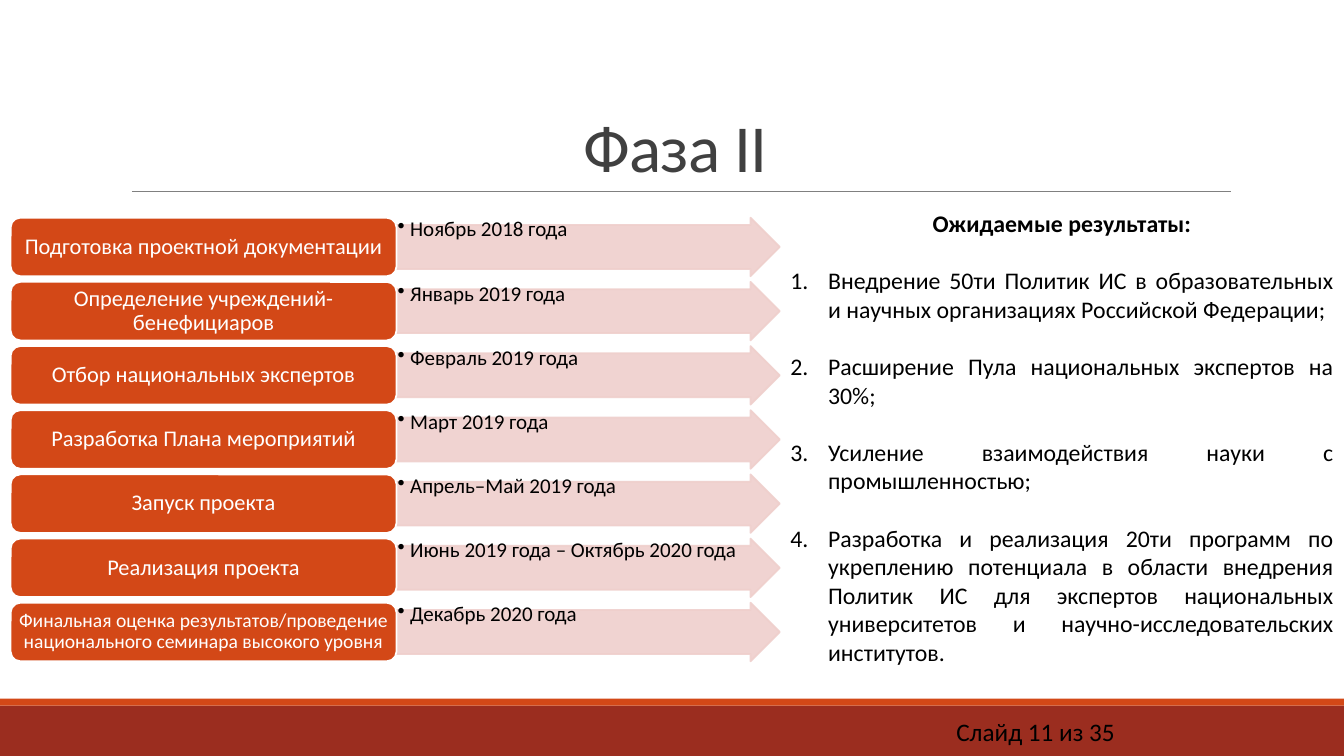
from lxml.etree import SubElement
from pptx import Presentation
from pptx.dml.color import RGBColor
from pptx.enum.shapes import MSO_CONNECTOR, MSO_SHAPE
from pptx.enum.text import MSO_ANCHOR, MSO_AUTO_SIZE, PP_ALIGN
from pptx.oxml.ns import qn
from pptx.util import Pt

ORANGE, DARK_RED, PINK = "D34817", "9B2D1F", "EFCFCC"
WHITE, BLACK, TITLE_GREY, RULE_GREY = "FFFFFF", "000000", "404040", "808080"

STAGES = [
    ("Подготовка проектной документации", "Ноябрь 2018 года", 16),
    ("Определение учреждений-бенефициаров", "Январь 2019 года", 16),
    ("Отбор национальных экспертов", "Февраль 2019 года", 16),
    ("Разработка Плана мероприятий", "Март 2019 года", 16),
    ("Запуск проекта", "Апрель–Май 2019 года", 16),
    ("Реализация проекта", "Июнь 2019 года – Октябрь 2020 года", 16),
    ("Финальная оценка результатов/проведение национального семинара "
     "высокого уровня", "Декабрь 2020 года", 14),
]
RESULTS = [
    "Внедрение 50ти Политик ИС в образовательных и научных организациях "
    "Российской Федерации;",
    "Расширение Пула национальных экспертов на 30%;",
    "Усиление взаимодействия науки с промышленностью;",
    "Разработка и реализация 20ти программ по укреплению потенциала в области "
    "внедрения Политик ИС для экспертов национальных университетов и "
    "научно-исследовательских институтов.",
]


def colour(code):
    return RGBColor.from_string(code)


def apply(target, values):
    for name, value in values.items():
        setattr(target, name, value)


class PhaseSlide:
    font = "Calibri"

    def __init__(self, deck):
        self.page = deck.slides.add_slide(deck.slide_layouts[1])

    def place(self, box, left, top, width, height):
        apply(box, {"left": Pt(left), "top": Pt(top),
                    "width": Pt(width), "height": Pt(height)})

    def frame(self, box, insets=(7.2, 3.6), anchor=MSO_ANCHOR.TOP):
        across, down = map(Pt, insets)
        apply(box.text_frame, {
            "word_wrap": True, "auto_size": MSO_AUTO_SIZE.NONE,
            "vertical_anchor": anchor, "margin_left": across,
            "margin_right": across, "margin_top": down, "margin_bottom": down})
        return box.text_frame

    def add_span(self, para, text, size, code=BLACK, bold=False,
                 align=PP_ALIGN.LEFT, spacing=1.0, before=0):
        apply(para, {"alignment": align, "line_spacing": spacing,
                     "space_before": Pt(before), "space_after": Pt(0)})
        span = para.add_run()
        span.text = text
        apply(span.font, {"name": self.font, "size": Pt(size), "bold": bold})
        span.font.color.rgb = colour(code)
        return span

    def bullet(self, para, kind, indent=0, **values):
        properties = para._p.get_or_add_pPr()
        properties.set("marL", str(Pt(indent)))
        properties.set("indent", str(-Pt(indent)))
        mark = SubElement(properties, qn(f"a:{kind}"))
        for name, value in values.items():
            mark.set(name, value)

    def shape(self, preset, area, fill, line=None, opacity=None):
        shape = self.page.shapes.add_shape(preset, *map(Pt, area))
        shape.shadow.inherit = False
        shape.fill.solid()
        shape.fill.fore_color.rgb = colour(fill)
        if line:
            shape.line.color.rgb = colour(line)
            shape.line.width = Pt(1.25)
        else:
            shape.line.fill.background()
        if opacity:
            for tint in shape._element.spPr.iter(qn("a:srgbClr")):
                SubElement(tint, qn("a:alpha")).set("val", str(opacity * 1000))
        return shape

    def text_box(self, area, insets=(7.2, 3.6)):
        box = self.page.shapes.add_textbox(*map(Pt, area))
        return self.frame(box, insets).paragraphs[0]

    def rule(self, left, right, y):
        line = self.page.shapes.add_connector(
            MSO_CONNECTOR.STRAIGHT, Pt(left), Pt(y), Pt(right), Pt(y))
        line.line.color.rgb = colour(RULE_GREY)
        line.line.width = Pt(0.5)
        SubElement(line._element.spPr, qn("a:effectLst"))

    def title(self, text):
        box = self.page.shapes.title
        self.place(box, 86.4, 22.3, 792, 114.5)
        para = self.frame(box, anchor=MSO_ANCHOR.BOTTOM).paragraphs[0]
        span = self.add_span(para, text, 48, TITLE_GREY,
                             align=PP_ALIGN.CENTER, spacing=0.85)
        span._r.get_or_add_rPr().set("spc", "-50")

    def stage(self, top, label, date, size):
        left, seam, right, height = 7.6, 283.2, 557, 41.8
        arrow_area = (seam, top, right - seam, height)
        arrow = self.shape(MSO_SHAPE.RIGHT_ARROW, arrow_area, PINK, PINK, 90)
        arrow.adjustments[0] = 0.75
        para = self.text_box(arrow_area, (0.75, 0.75))
        self.add_span(para, date, 15, spacing=0.9)
        self.bullet(para, "buChar", 9, char="•")
        block = self.shape(MSO_SHAPE.ROUNDED_RECTANGLE,
                           (left, top, seam - left, height), ORANGE, WHITE)
        para = self.frame(block, (2.8, 0), MSO_ANCHOR.MIDDLE).paragraphs[0]
        self.add_span(para, label, size, WHITE,
                      align=PP_ALIGN.CENTER, spacing=0.9)

    def results(self, heading, items):
        box = self.page.placeholders[1]
        self.place(box, 557.3, 145.4, 402.5, 337)
        body = self.frame(box)
        para = body.paragraphs[0]
        self.add_span(para, heading, 17, bold=True, align=PP_ALIGN.CENTER)
        self.bullet(para, "buNone")
        for item in items:
            para = body.add_paragraph()
            self.add_span(para, item, 17, align=PP_ALIGN.JUSTIFY, before=20.5)
            self.bullet(para, "buAutoNum", 27, type="arabicPeriod")


def main():
    deck = Presentation()
    apply(deck, {"slide_width": Pt(960), "slide_height": Pt(540)})
    slide = PhaseSlide(deck)
    slide.shape(MSO_SHAPE.RECTANGLE, (0, 504, 960, 36), DARK_RED)
    slide.shape(MSO_SHAPE.RECTANGLE, (0, 499, 960, 5), ORANGE)
    slide.rule(94.3, 879, 136.7)
    slide.add_span(slide.text_box((676, 508.3, 134, 29)), "Слайд 11 из 35", 18)
    slide.title("Фаза II")
    for row, (label, date, size) in enumerate(STAGES):
        slide.stage(155.5 + row * 45.84, label, date, size)
    slide.results("Ожидаемые результаты:", RESULTS)
    deck.save("out.pptx")


if __name__ == "__main__":
    main()
